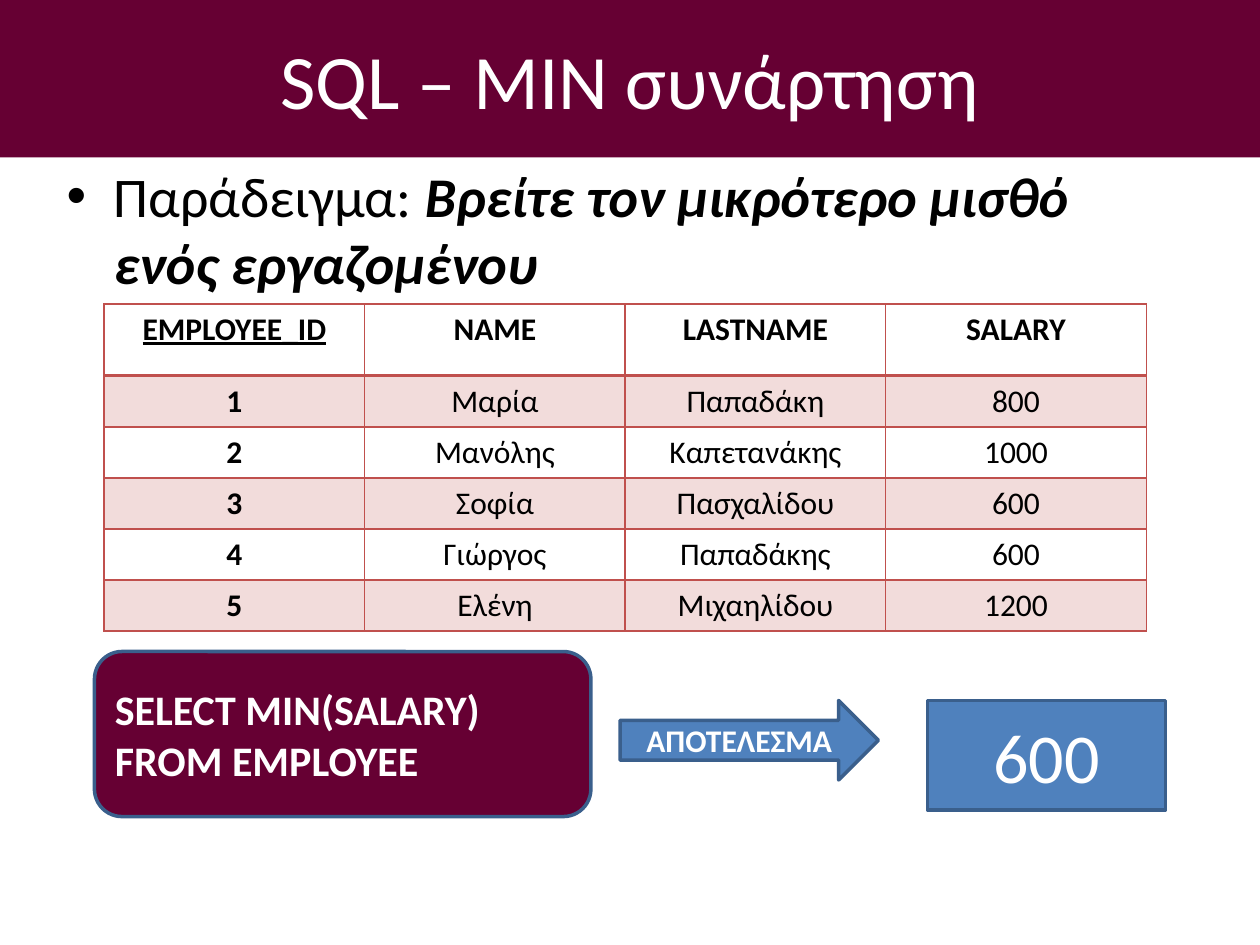
from typing import NamedTuple

from lxml import etree
from pptx import Presentation
from pptx.dml.color import RGBColor
from pptx.enum import shapes, text
from pptx.oxml.ns import qn
from pptx.util import Pt

COLORS = {
    "wine": "660033",
    "blue": "4F81BD",
    "outline": "3A5F8C",
    "red": "C0504D",
    "white": "FFFFFF",
    "black": "000000",
}
LEFT, CENTER = text.PP_ALIGN.LEFT, text.PP_ALIGN.CENTER
SHAPE = shapes.MSO_SHAPE


class Box(NamedTuple):
    kind: SHAPE
    left: float
    top: float
    width: float
    height: float
    fill: str
    lines: tuple[str, ...]
    align: text.PP_ALIGN
    font: dict


BOXES = [
    Box(SHAPE.ROUNDED_RECTANGLE, 54, 372.3, 283.7, 94.3, "wine",
        ("SELECT ΜΙΝ(SALARY)", "FROM EMPLOYEE"), LEFT, {"size": Pt(24), "bold": True}),
    Box(SHAPE.RIGHT_ARROW, 354.3, 400.3, 147.6, 45.4, "blue",
        ("ΑΠΟΤΕΛΕΣΜΑ",), CENTER, {"size": Pt(18), "bold": True}),
    Box(SHAPE.RECTANGLE, 530, 400.3, 136, 62.6, "blue",
        ("600",), CENTER, {"size": Pt(40)}),
]

EMPLOYEES = [
    ("EMPLOYEE_ID", "NAME", "LASTNAME", "SALARY"),
    ("1", "Μαρία", "Παπαδάκη", "800"),
    ("2", "Μανόλης", "Καπετανάκης", "1000"),
    ("3", "Σοφία", "Πασχαλίδου", "600"),
    ("4", "Γιώργος", "Παπαδάκης", "600"),
    ("5", "Ελένη", "Μιχαηλίδου", "1200"),
]
COL_WIDTH, HEADER_HEIGHT, ROW_HEIGHT = 148.9, 41, 29.2


def rgb(name: str) -> RGBColor:
    return RGBColor.from_string(COLORS[name])


def add_run(p, words: str, color: str, **font) -> None:
    r = p.add_run()
    r.text = words
    r.font.color.rgb = rgb(color)
    for key, value in {"name": "Calibri", **font}.items():
        setattr(r.font, key, value)


def add_title(s, words: str) -> None:
    sp = s.shapes.title
    place = {"left": Pt(0), "top": Pt(0), "width": Pt(720), "height": Pt(90)}
    for key, value in place.items():
        setattr(sp, key, value)
    sp.fill.solid()
    sp.fill.fore_color.rgb = rgb("wine")
    sp.text_frame.vertical_anchor = text.MSO_ANCHOR.MIDDLE
    p = sp.text_frame.paragraphs[0]
    p.alignment = CENTER
    add_run(p, words, "white", size=Pt(44))


def add_example(s) -> None:
    tf = s.shapes.add_textbox(Pt(31), Pt(88.6), Pt(648), Pt(356.4)).text_frame
    tf.word_wrap = True
    p = tf.paragraphs[0]
    pPr = p._p.get_or_add_pPr()
    pPr.set("marL", str(Pt(27)))
    pPr.set("indent", str(-Pt(27)))
    etree.SubElement(pPr, qn("a:buFont"), typeface="Arial")
    etree.SubElement(pPr, qn("a:buChar"), char="•")
    add_run(p, "Παράδειγμα: ", "black", size=Pt(32))
    add_run(p, "Βρείτε τον μικρότερο μισθό ενός εργαζομένου", "black",
            size=Pt(32), bold=True, italic=True)


def set_borders(cell, widths: dict[str, float]) -> None:
    tcPr = cell._tc.get_or_add_tcPr()
    for side, width in widths.items():
        ln = etree.SubElement(tcPr, qn(f"a:ln{side}"), w=str(Pt(width)))
        fill = etree.SubElement(ln, qn("a:solidFill"))
        etree.SubElement(fill, qn("a:srgbClr"), val=COLORS["red"])


def fill_band(cell) -> None:
    """Give the cell a red fill at 20% opacity."""
    cell.fill.solid()
    cell.fill.fore_color.rgb = rgb("red")
    color = cell._tc.tcPr.find(f"{qn('a:solidFill')}/{qn('a:srgbClr')}")
    etree.SubElement(color, qn("a:alpha"), val="20000")


def add_employee_table(s) -> None:
    rows, cols = len(EMPLOYEES), len(EMPLOYEES[0])
    height = HEADER_HEIGHT + (rows - 1) * ROW_HEIGHT
    table = s.shapes.add_table(rows, cols, Pt(59.5), Pt(173.7),
                               Pt(cols * COL_WIDTH), Pt(height)).table
    table.first_row = table.horz_banding = False
    for column in table.columns:
        column.width = Pt(COL_WIDTH)
    for i, record in enumerate(EMPLOYEES):
        table.rows[i].height = Pt(ROW_HEIGHT if i else HEADER_HEIGHT)
        for j, value in enumerate(record):
            cell = table.cell(i, j)
            set_borders(cell, {"L": 1, "R": 1, "T": 2 if i == 1 else 1,
                               "B": 2 if i == 0 else 1})
            if i % 2:
                fill_band(cell)
            else:
                cell.fill.background()
            p = cell.text_frame.paragraphs[0]
            p.alignment = CENTER
            add_run(p, value, "black", size=Pt(18), bold=i == 0 or j == 0,
                    underline=i == 0 and j == 0)


def add_box(s, box: Box) -> None:
    sp = s.shapes.add_shape(box.kind, Pt(box.left), Pt(box.top),
                            Pt(box.width), Pt(box.height))
    sp.shadow.inherit = False
    sp.fill.solid()
    sp.fill.fore_color.rgb = rgb(box.fill)
    sp.line.color.rgb = rgb("outline")
    sp.line.width = Pt(2)
    tf = sp.text_frame
    tf.word_wrap = True
    tf.vertical_anchor = text.MSO_ANCHOR.MIDDLE
    for i, words in enumerate(box.lines):
        p = tf.add_paragraph() if i else tf.paragraphs[0]
        p.alignment = box.align
        add_run(p, words, "white", **box.font)


def main() -> None:
    prs = Presentation()
    prs.slide_width, prs.slide_height = Pt(720), Pt(540)
    s = prs.slides.add_slide(prs.slide_layouts.get_by_name("Title Only"))
    add_title(s, "SQL – ΜIN συνάρτηση")
    add_example(s)
    add_employee_table(s)
    for box in BOXES:
        add_box(s, box)
    prs.save("out.pptx")


if __name__ == "__main__":
    main()
